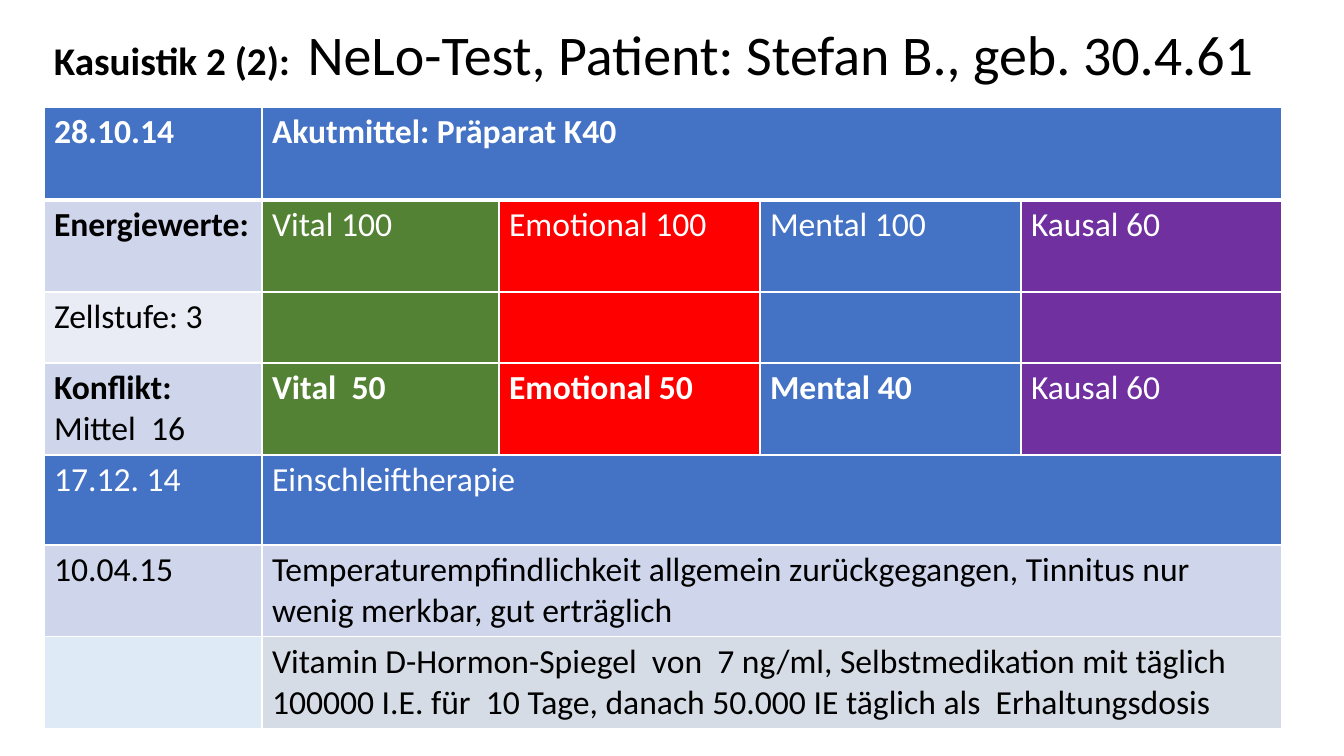
from lxml.etree import SubElement
from pptx import Presentation
from pptx.dml.color import RGBColor as Color
from pptx.enum.text import MSO_ANCHOR as Anchor
from pptx.oxml.ns import qn
from pptx.util import Emu, Pt

COLORS = {
    "white": "FFFFFF", "black": "000000", "blue": "4472C4",
    "green": "548235", "red": "FF0000", "purple": "7030A0",
    "band": "CFD5EA", "light": "E9EBF5", "sky": "DEEBF7", "gray": "D6DCE5",
}
LEVELS = ["green", "red", "blue", "purple"]
COLUMNS = [218, 237, 261, 261, 261]
HEIGHTS = [93, 92, 71, 92, 90, 92, 92]


def px(length):
    return Emu(round(length * 914400 / 100.8))


def add_text(para, text, size=24, color="black", bold=False):
    span = para.add_run()
    span.text = text
    span.font.name = "Calibri"
    span.font.size = Pt(size)
    span.font.bold = bold
    span.font.color.rgb = Color.from_string(COLORS[color])


deck = Presentation()
deck.slide_width, deck.slide_height = px(1344), px(756)
page = deck.slides.add_slide(deck.slide_layouts[6])

title = page.shapes.add_textbox(px(44), px(0), px(1300), px(114)).text_frame
title.word_wrap = True
title.vertical_anchor = Anchor.MIDDLE
heading = title.paragraphs[0]
heading.line_spacing = 0.9
add_text(heading, "Kasuistik 2 (2):  ", size=28, bold=True)
add_text(heading, "NeLo-Test, Patient: Stefan B., geb. 30.4.61", size=40)

ROWS = [
    (["blue", "blue"], "white", ["*28.10.14", "*Akutmittel: Präparat K40"]),
    (["band"] + LEVELS, "white",
     ["*Energiewerte:", "Vital 100", "Emotional 100", "Mental 100", "Kausal 60"]),
    (["light"] + LEVELS, "white", ["Zellstufe: 3", "", "", "", ""]),
    (["band"] + LEVELS, "white",
     ["*Konflikt:\nMittel  16", "*Vital  50", "*Emotional 50", "*Mental 40", "Kausal 60"]),
    (["blue", "blue"], "white", ["17.12. 14", "Einschleiftherapie"]),
    (["band", "band"], "black",
     ["10.04.15", "Temperaturempfindlichkeit allgemein zurückgegangen, "
      "Tinnitus nur wenig merkbar, gut erträglich"]),
    (["sky", "gray"], "black",
     ["", "Vitamin D-Hormon-Spiegel  von  7 ng/ml, Selbstmedikation mit täglich "
      "100000 I.E. für  10 Tage, danach 50.000 IE täglich als  Erhaltungsdosis"]),
]

table = page.shapes.add_table(
    len(ROWS), len(COLUMNS), px(44), px(107), px(sum(COLUMNS)), px(sum(HEIGHTS))).table
for column, width in zip(table.columns, COLUMNS):
    column.width = px(width)

for index, (fills, color, texts) in enumerate(ROWS):
    table.rows[index].height = px(HEIGHTS[index])
    for position in range(len(COLUMNS)):
        cell = table.cell(index, position)
        properties = cell._tc.get_or_add_tcPr()
        for side in ("lnL", "lnR", "lnT", "lnB"):
            thick = (index, side) in [(0, "lnB"), (1, "lnT")]
            line = SubElement(properties, qn(f"a:{side}"), w=str(Pt(3 if thick else 1)))
            paint = SubElement(line, qn("a:solidFill"))
            SubElement(paint, qn("a:srgbClr"), val=COLORS["white"])
        cell.fill.solid()
        cell.fill.fore_color.rgb = Color.from_string(COLORS[fills[min(position, len(fills) - 1)]])
    if len(texts) == 2:
        table.cell(index, 1).merge(table.cell(index, len(COLUMNS) - 1))
    for position, text in enumerate(texts):
        frame = table.cell(index, position).text_frame
        ink = "black" if position == 0 and fills[0] != "blue" else color
        for number, part in enumerate(text.split("\n")):
            para = frame.add_paragraph() if number else frame.paragraphs[0]
            if part:
                add_text(para, part.lstrip("*"), color=ink, bold=part.startswith("*"))

deck.save("out.pptx")
